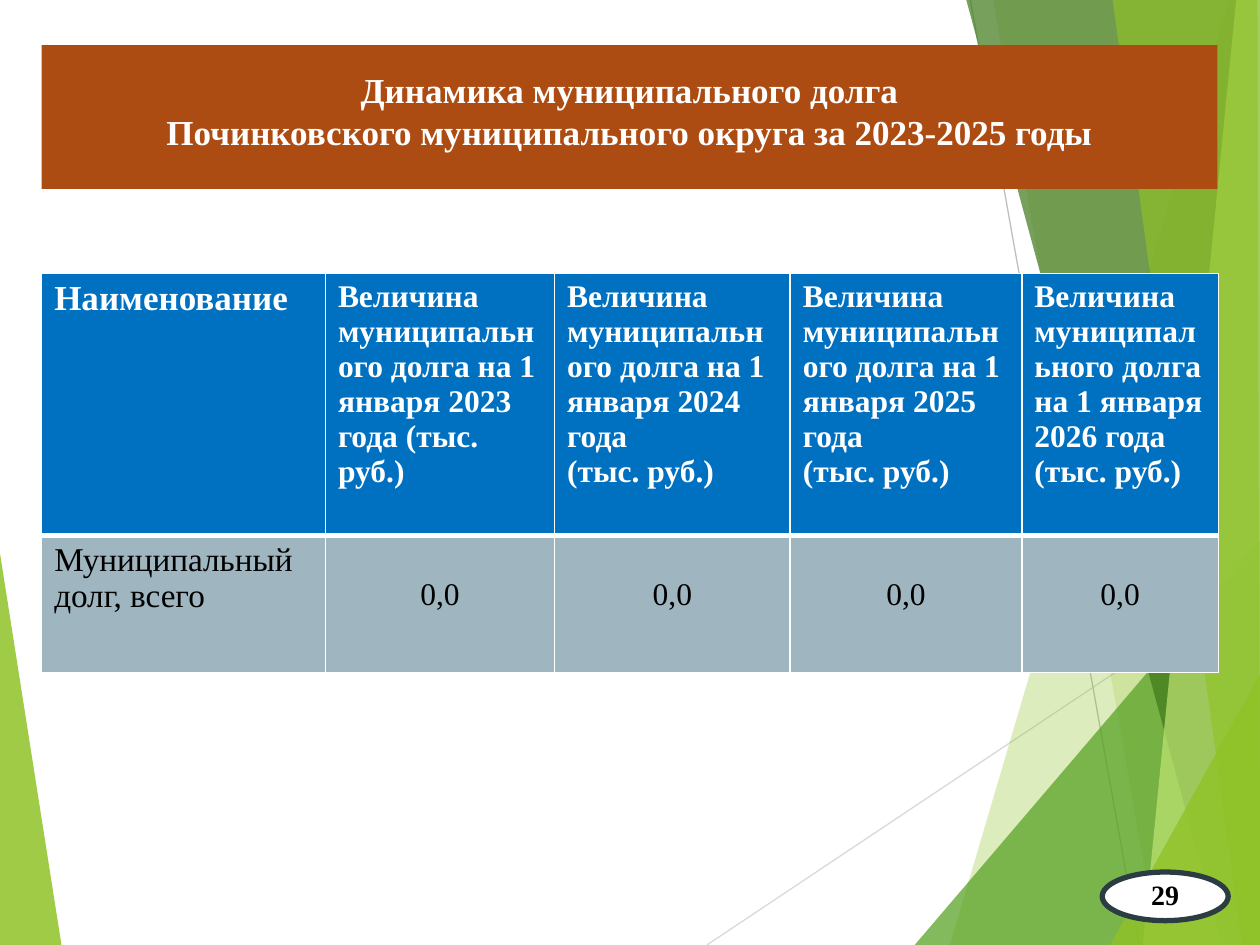
from dataclasses import dataclass

from lxml import etree
from pptx import Presentation
from pptx.dml.color import RGBColor
from pptx.enum.shapes import MSO_CONNECTOR, MSO_SHAPE
from pptx.enum.text import MSO_ANCHOR, MSO_AUTO_SIZE, PP_ALIGN
from pptx.oxml.ns import qn
from pptx.util import Cm, Pt

STRAIGHT = MSO_CONNECTOR.STRAIGHT
OVAL = MSO_SHAPE.OVAL
TOP, MIDDLE = MSO_ANCHOR.TOP, MSO_ANCHOR.MIDDLE
LEFT, CENTER = PP_ALIGN.LEFT, PP_ALIGN.CENTER
NO_AUTOFIT = MSO_AUTO_SIZE.NONE


@dataclass(frozen=True)
class Theme:
    font: str = "Times New Roman"
    white: str = "FFFFFF"
    black: str = "000000"
    banner: str = "AD4C12"
    header: str = "0070C0"
    body: str = "9FB6C0"
    badge_line: str = "2C3C43"
    lime: str = "90C226"
    pale_lime: str = "C0E474"
    green: str = "54A021"
    dark_green: str = "3F7819"
    light_ray: str = "D9D9D9"
    dark_ray: str = "BFBFBF"
    title_size: int = 20
    row_name_size: int = 19
    cell_size: int = 18
    badge_size: int = 16


theme = Theme()
WIDTH, HEIGHT = 25.4, 19.05


def write(frame, lines, size, color, bold, align):
    """Fill a text frame with one paragraph and run per line."""
    for index, line in enumerate(lines):
        paragraph = frame.paragraphs[0] if index == 0 else frame.add_paragraph()
        paragraph.alignment = align
        run = paragraph.add_run()
        run.text = line
        run.font.name = theme.font
        run.font.size = Pt(size)
        run.font.bold = bold
        run.font.color.rgb = RGBColor.from_string(color)


def add_facet(shapes, points, color, opacity):
    """Draw a borderless translucent polygon; points in cm, opacity in percent."""
    corners = [(Cm(x), Cm(y)) for x, y in points]
    builder = shapes.build_freeform(*corners[0])
    builder.add_line_segments(corners[1:], close=True)
    facet = builder.convert_to_shape()
    facet.shadow.inherit = False
    facet.line.fill.background()
    facet.fill.solid()
    facet.fill.fore_color.rgb = RGBColor.from_string(color)
    tint = facet.element.spPr.find(f"{qn('a:solidFill')}/{qn('a:srgbClr')}")
    etree.SubElement(tint, qn("a:alpha"), val=str(opacity * 1000))


presentation = Presentation()
presentation.slide_width, presentation.slide_height = Cm(WIDTH), Cm(HEIGHT)
slide = presentation.slides.add_slide(presentation.slide_layouts[5])
shapes = slide.shapes

# Background: left wedge, two thin rays, then the right-hand facets
add_facet(shapes, [(0, 11.15), (1.24, HEIGHT), (0, HEIGHT)], theme.lime, 85)

rays = [
    (14.25, HEIGHT, WIDTH, 11.61, theme.light_ray),
    (19.56, 0, 22.96, HEIGHT, theme.dark_ray),
]
for x1, y1, x2, y2, color in rays:
    ray = shapes.add_connector(STRAIGHT, Cm(x1), Cm(y1), Cm(x2), Cm(y2))
    ray.line.color.rgb = RGBColor.from_string(color)
    ray.line.width = Pt(0.75)
    etree.SubElement(ray.element.spPr, qn("a:effectLst"))

# Each facet runs from its left edge to the right edge of the slide
bottom_right, top_right = (WIDTH, HEIGHT), (WIDTH, 0)
facets = [
    ([(24.77, 0), (19.15, HEIGHT), bottom_right, top_right], theme.lime, 30),
    ([(20.02, 0), (23.34, HEIGHT), bottom_right, top_right], theme.lime, 20),
    ([(18.44, HEIGHT), (WIDTH, 10.9), bottom_right], theme.green, 72),
    ([(19.48, 0), (24.64, HEIGHT), bottom_right, top_right], theme.dark_green, 70),
    ([(24.92, 0), (23.04, HEIGHT), bottom_right, top_right], theme.pale_lime, 70),
    ([(22.43, 0), (25.04, HEIGHT), bottom_right, (25.35, 0)], theme.lime, 65),
    ([(22.38, HEIGHT), (WIDTH, 13.59), bottom_right], theme.lime, 80),
]
for points, color, opacity in facets:
    add_facet(shapes, points, color, opacity)

# Debt table
column_widths = [5.72, 4.62, 4.75, 4.67, 3.96]
row_heights = [5.28, 2.77]
debt = "Величина муниципального долга на 1 января"
unit = "(тыс. руб.)"
headings = [["Наименование"], [f"{debt} 2023 года {unit}"]]
headings += [[f"{debt} {year} года", unit] for year in (2024, 2025, 2026)]
values = [["Муниципальный долг, всего"]] + [["0,0"]] * 4

table = shapes.add_table(
    len(row_heights), len(column_widths), Cm(0.84), Cm(5.51),
    Cm(sum(column_widths)), Cm(sum(row_heights)),
).table
for column, width in zip(table.columns, column_widths):
    column.width = Cm(width)
for row, height in zip(table.rows, row_heights):
    row.height = Cm(height)

for row_index, texts in enumerate([headings, values]):
    is_header = row_index == 0
    for column_index, lines in enumerate(texts):
        cell = table.cell(row_index, column_index)
        is_name = column_index == 0
        properties = cell._tc.get_or_add_tcPr()
        for side in ("lnL", "lnR", "lnT", "lnB"):
            # The rule between the header and the body is thicker
            thick = side == ("lnB" if is_header else "lnT")
            border = etree.SubElement(
                properties, qn(f"a:{side}"), w=str(Pt(3 if thick else 1)))
            paint = etree.SubElement(border, qn("a:solidFill"))
            etree.SubElement(paint, qn("a:srgbClr"), val=theme.white)
        cell.fill.solid()
        cell.fill.fore_color.rgb = RGBColor.from_string(
            theme.header if is_header else theme.body)
        cell.vertical_anchor = TOP
        size, align = theme.cell_size, LEFT
        if is_name:
            size = theme.title_size if is_header else theme.row_name_size
        elif not is_header:
            cell.margin_top = Cm(0.84)
            align = CENTER
        write(cell.text_frame, lines, size,
              theme.white if is_header else theme.black, is_header, align)

# Page number badge
badge = shapes.add_shape(OVAL, Cm(22.22), Cm(17.58), Cm(2.54), Cm(0.98))
badge.shadow.inherit = False
badge.fill.solid()
badge.fill.fore_color.rgb = RGBColor.from_string(theme.white)
badge.line.color.rgb = RGBColor.from_string(theme.badge_line)
badge.line.width = Pt(3)
number = badge.text_frame
number.margin_left = number.margin_right = number.margin_top = 0
number.margin_bottom = Cm(0.1)
number.vertical_anchor = MIDDLE
write(number, ["29"], theme.badge_size, theme.black, True, CENTER)

# Title banner, brought in front of the facets
title = shapes.title
title.left, title.top, title.width, title.height = Cm(0.84), Cm(0.91), Cm(23.7), Cm(2.9)
title.fill.solid()
title.fill.fore_color.rgb = RGBColor.from_string(theme.banner)
banner = title.text_frame
banner.auto_size = NO_AUTOFIT
banner.word_wrap = True
banner.vertical_anchor = TOP
banner.margin_left = banner.margin_right = banner.margin_bottom = 0
banner.margin_top = Cm(0.48)
write(banner, ["Динамика муниципального долга",
               "Починковского муниципального округа за 2023-2025 годы"],
      theme.title_size, theme.white, True, CENTER)
title.element.getparent().append(title.element)

presentation.save("out.pptx")
